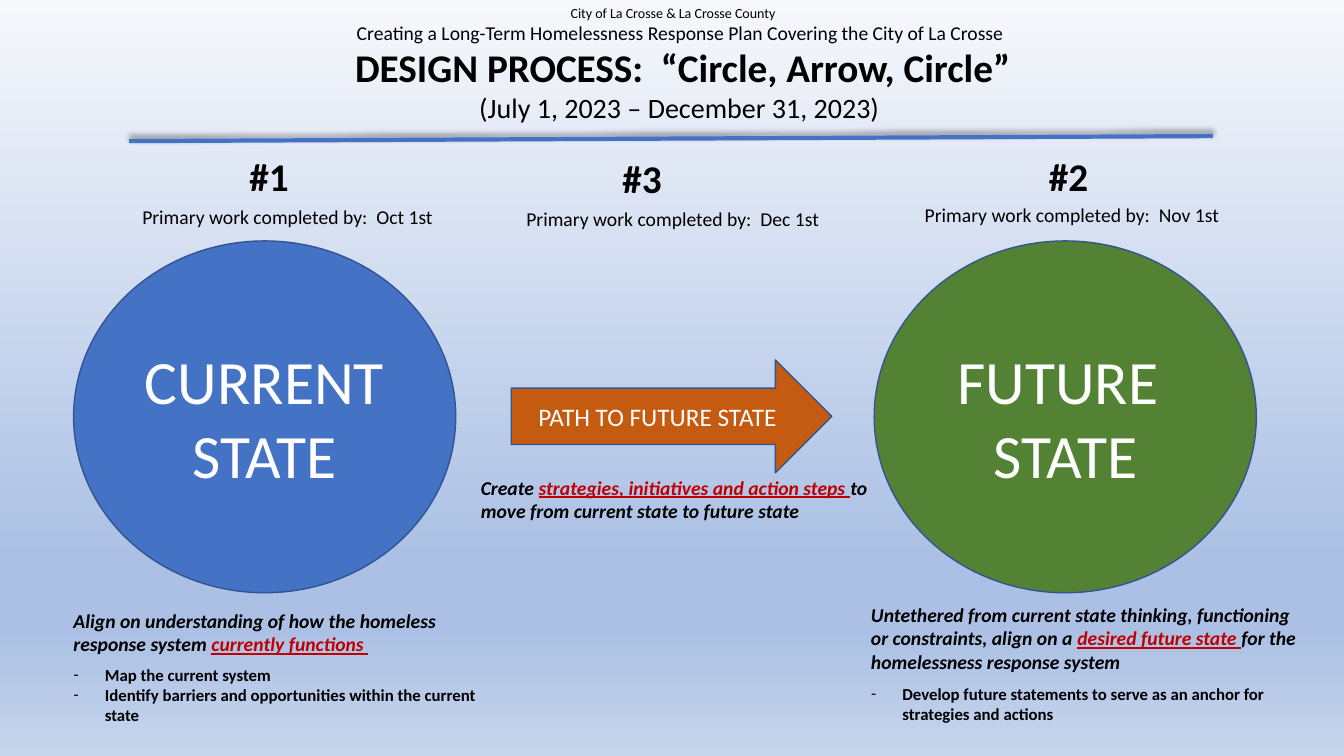
import pptx
import pptx.dml.color
import pptx.enum.shapes
import pptx.enum.text
import pptx.oxml
import pptx.oxml.ns
import pptx.util
from pptx.util import Inches

SHAPE = pptx.enum.shapes.MSO_SHAPE
ALIGN = pptx.enum.text.PP_ALIGN
ANCHOR = pptx.enum.text.MSO_ANCHOR
BLACK, WHITE, RED = "000000", "FFFFFF", "C00000"
BLUE, GREEN, ORANGE, OUTLINE = "4472C4", "548235", "C55A11", "325491"
BACKGROUND = [(0, "F6F8FC"), (74, "ABC0E4"), (83, "ABC0E4"), (100, "C7D5ED")]
qn = pptx.oxml.ns.qn


def rgb(color):
    return pptx.dml.color.RGBColor.from_string(color)


def add_xml(parent, xml):
    ns = pptx.oxml.ns.nsdecls("a")
    parent.append(pptx.oxml.parse_xml(xml.replace(">", f" {ns}>", 1)))


class Builder:
    font = "Calibri"

    def __init__(self, slide):
        self.s = slide

    def background(self, stops):
        fill = self.s.background.fill
        fill.gradient()
        fill.gradient_angle = 270
        gs_lst = next(self.s._element.iter(qn("a:gsLst")))
        for gs in list(gs_lst):
            gs_lst.remove(gs)
        for pos, color in stops:
            add_xml(gs_lst, f'<a:gs pos="{pos * 1000}"><a:srgbClr val="{color}"/></a:gs>')

    def run(self, p, text, size, color=BLACK, bold=False, italic=False, underline=False):
        r = p.add_run()
        r.text = text
        f = r.font
        f.name, f.size = self.font, pptx.util.Pt(size)
        f.bold, f.italic, f.underline = bold, italic, underline
        f.color.rgb = rgb(color)

    def fill_text(self, tf, paragraphs, align=ALIGN.CENTER, anchor=ANCHOR.TOP):
        tf.word_wrap = True
        tf.auto_size = pptx.enum.text.MSO_AUTO_SIZE.NONE
        tf.vertical_anchor = anchor
        for i, runs in enumerate(paragraphs):
            p = tf.add_paragraph() if i else tf.paragraphs[0]
            p.alignment = align
            p.space_before = pptx.util.Pt(0)
            for text, style in runs:
                self.run(p, text, **style)

    def place(self, sp, x, y, w, h):
        sp.left, sp.top, sp.width, sp.height = map(Inches, (x, y, w, h))

    def text(self, x, y, w, h, paragraphs, align=ALIGN.CENTER):
        sp = self.s.shapes.add_textbox(*map(Inches, (x, y, w, h)))
        self.fill_text(sp.text_frame, paragraphs, align)

    def title(self, x, y, w, h, paragraphs):
        sp = self.s.shapes.title
        self.place(sp, x, y, w, h)
        self.fill_text(sp.text_frame, paragraphs)

    def bullets(self, idx, x, y, w, h, items):
        sp = self.s.placeholders[idx]
        self.place(sp, x, y, w, h)
        style = dict(size=12, bold=True)
        self.fill_text(sp.text_frame, [[(item, style)] for item in items], ALIGN.LEFT)
        for p in sp.text_frame.paragraphs:
            pPr = p._p.get_or_add_pPr()
            pPr.set("marL", str(Inches(0.31)))
            pPr.set("indent", str(Inches(-0.31)))
            add_xml(pPr, '<a:buFont typeface="Calibri"></a:buFont>')
            add_xml(pPr, '<a:buChar char="-"></a:buChar>')

    def shape(self, kind, x, y, w, h, fill, lines, size):
        sp = self.s.shapes.add_shape(kind, *map(Inches, (x, y, w, h)))
        sp.shadow.inherit = False
        sp.fill.solid()
        sp.fill.fore_color.rgb = rgb(fill)
        sp.line.color.rgb = rgb(OUTLINE)
        sp.line.width = pptx.util.Pt(1)
        style = dict(size=size, color=WHITE)
        self.fill_text(sp.text_frame, [[(line, style)] for line in lines], anchor=ANCHOR.MIDDLE)

    def rule(self, x1, y1, x2, y2):
        straight = pptx.enum.shapes.MSO_CONNECTOR.STRAIGHT
        cx = self.s.shapes.add_connector(straight, *map(Inches, (x1, y1, x2, y2)))
        cx.line.color.rgb = rgb(BLUE)
        cx.line.width = pptx.util.Pt(3)
        add_xml(cx._element.spPr,
                '<a:effectLst><a:outerShdw blurRad="50800" dist="38100" dir="16200000" '
                'rotWithShape="0"><a:srgbClr val="000000"><a:alpha val="40000"/>'
                '</a:srgbClr></a:outerShdw></a:effectLst>')

    def step(self, number, x, y, due, due_x, due_y):
        self.text(x, y, 1.88, 0.57,
                  [[(number, dict(size=28, bold=True)), (" ", dict(size=20))]])
        self.text(due_x, due_y, 3.79, 0.34,
                  [[(f"Primary work completed by:  {due} ", dict(size=14))]])

    def goal(self, x, y, h, before, key, after=""):
        plain = dict(size=14, bold=True, italic=True)
        marked = dict(plain, color=RED, underline=True)
        runs = [(before, plain), (key, marked)]
        if after:
            runs.append((after, plain))
        self.text(x, y, 4.49, h, [runs], ALIGN.LEFT)


def main():
    prs = pptx.Presentation()
    prs.slide_width, prs.slide_height = Inches(13.33), Inches(7.5)
    b = Builder(prs.slides.add_slide(prs.slide_layouts[3]))
    b.background(BACKGROUND)

    b.text(0.03, 0, 13.32, 0.27,
           [[("City of La Crosse & La Crosse County ", dict(size=10))]])
    b.text(0.11, 0.16, 13.32, 0.34,
           [[("Creating a Long-Term Homelessness Response Plan Covering the City of La Crosse ",
              dict(size=14))]])
    b.title(0.11, 0.38, 13.32, 0.91,
            [[("DESIGN PROCESS:  “Circle, Arrow, Circle”", dict(size=28, bold=True))],
             [("(July 1, 2023 – December 31, 2023) ", dict(size=20))]])
    b.rule(1.28, 1.4, 12.03, 1.35)

    for x, color, state in [(0.73, BLUE, "CURRENT "), (8.67, GREEN, "FUTURE ")]:
        b.shape(SHAPE.OVAL, x, 2.39, 3.79, 3.49, color, [state, "STATE"], 44)
    b.shape(SHAPE.RIGHT_ARROW, 5.07, 3.57, 3.18, 1.12, ORANGE, ["PATH TO FUTURE STATE"], 18)

    b.step("#1", 1.76, 1.46, "Oct 1st", 0.98, 1.98)
    b.step("#3", 5.46, 1.48, "Dec 1st", 4.8, 2)
    b.step("#2", 9.69, 1.46, "Nov 1st", 8.76, 1.96)

    b.goal(0.63, 5.99, 0.57, "Align on understanding of how the homeless response system ",
           "currently functions ")
    b.goal(4.67, 4.67, 0.57, "Create ", "strategies, initiatives and action steps ",
           "to move from current state to future state")
    b.goal(8.54, 5.93, 0.81,
           "Untethered from current state thinking, functioning or constraints, align on a ",
           "desired future state ", "for the homelessness response system")

    b.bullets(1, 0.63, 6.54, 4.49, 0.71,
              ["Map the current system",
               "Identify barriers and opportunities within the current state"])
    b.bullets(2, 8.54, 6.73, 4.49, 0.5,
              ["Develop future statements to serve as an anchor for strategies and actions"])
    prs.save("out.pptx")


if __name__ == "__main__":
    main()
